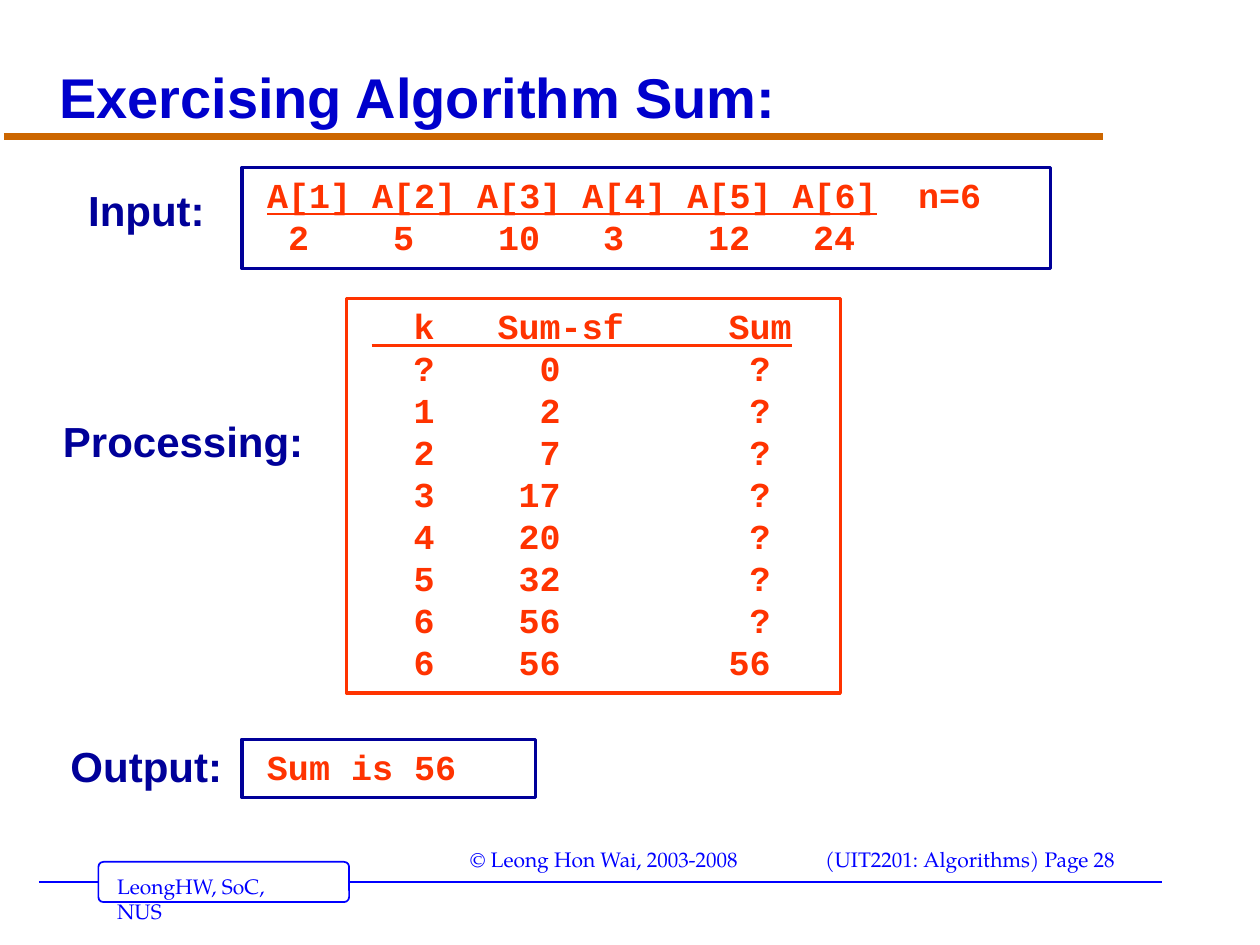
from pptx import Presentation
from pptx.dml.color import RGBColor
from pptx.enum.shapes import MSO_CONNECTOR, MSO_SHAPE
from pptx.enum.text import MSO_ANCHOR, MSO_AUTO_SIZE, PP_ALIGN
from pptx.oxml.ns import qn
from pptx.util import Pt
from lxml import etree

STRAIGHT = MSO_CONNECTOR.STRAIGHT
RECTANGLE, ROUNDED = MSO_SHAPE.RECTANGLE, MSO_SHAPE.ROUNDED_RECTANGLE
TOP, BOTTOM = MSO_ANCHOR.TOP, MSO_ANCHOR.BOTTOM
NO_AUTOFIT = MSO_AUTO_SIZE.NONE
LEFT = PP_ALIGN.LEFT

BLUE = RGBColor(0x00, 0x00, 0xFF)
TITLE_BLUE = RGBColor(0x00, 0x00, 0xCC)
NAVY = RGBColor(0x00, 0x00, 0x99)
ORANGE = RGBColor(0xCC, 0x66, 0x00)
RED = RGBColor(0xFF, 0x33, 0x00)
WHITE = RGBColor(0xFF, 0xFF, 0xFF)

CHAR = 12  # width of one Courier character at 20 pt


def add_run(paragraph, text, font, size, color, bold=True, underline=False):
    run = paragraph.add_run()
    run.text = text
    run.font.name = font
    run.font.size = Pt(size)
    run.font.color.rgb = color
    run.font.bold = bold
    run.font.underline = underline


def set_frame(frame, side, wrap=False):
    frame.auto_size = NO_AUTOFIT
    frame.word_wrap = wrap
    frame.vertical_anchor = TOP
    frame.margin_left = frame.margin_right = Pt(side)
    frame.margin_top = frame.margin_bottom = Pt(3.6)


prs = Presentation()
prs.slide_width, prs.slide_height = Pt(720), Pt(540)
slide = prs.slides.add_slide(prs.slide_layouts[5])
shapes = slide.shapes

# Footer rule, title rule and the rule under the trace header
for x1, x2, y, color, width in [(22.3, 663.8, 504, BLUE, 1),
                                (2.2, 630, 77.8, ORANGE, 4),
                                (212.4, 212.4 + 20 * CHAR, 197.3, RED, 1.5)]:
    rule = shapes.add_connector(STRAIGHT, Pt(x1), Pt(y), Pt(x2), Pt(y))
    rule.line.color.rgb = color
    rule.line.width = Pt(width)
    etree.SubElement(rule._element.spPr, qn("a:effectLst"))

# Footer badge and texts
badge = shapes.add_shape(ROUNDED, Pt(56.2), Pt(492.5), Pt(143.3), Pt(23))
badge.adjustments[0] = 0.125
badge.shadow.inherit = False
badge.fill.solid()
badge.fill.fore_color.rgb = WHITE
badge.line.color.rgb = BLUE
badge.line.width = Pt(1)

for text, x, y, width, wrap in [
        ("LeongHW, SoC, NUS", 59.8, 495.8, 118.8, True),
        ("(UIT2201: Algorithms) Page 28", 464.4, 480.2, 180.7, False),
        ("© Leong Hon Wai, 2003-2008", 261.4, 480.2, 168.5, False)]:
    footer = shapes.add_textbox(Pt(x), Pt(y), Pt(width), Pt(21.6)).text_frame
    set_frame(footer, 7.2, wrap)
    add_run(footer.paragraphs[0], text, "TeX Gyre Pagella", 12, BLUE, bold=False)

# Title
title = shapes.title
title.left, title.top, title.width, title.height = Pt(26.6), Pt(15.1), Pt(645.1), Pt(63.4)
set_frame(title.text_frame, 7.2, wrap=True)
title.text_frame.vertical_anchor = BOTTOM
heading = title.text_frame.paragraphs[0]
heading.alignment = LEFT
heading.line_spacing = 0.9
add_run(heading, "Exercising Algorithm Sum:", "Arial", 32, TITLE_BLUE)

# Rows are (underlined text, plain text, tab stops as (column, alignment))
input_rows = [
    ("A[1] A[2] A[3] A[4] A[5] A[6]", "\tn=6", [(31, "l")]),
    ("", "\t2\t5\t10\t3\t12\t24", [(1 + 5 * i, "l") for i in range(6)]),
]
trace = [("?", 0, "?"), (1, 2, "?"), (2, 7, "?"), (3, 17, "?"), (4, 20, "?"),
         (5, 32, "?"), (6, 56, "?"), (6, 56, 56)]
trace_rows = [("\tk\tSum-sf\tSum", "", [(2, "l"), (6, "l"), (17, "l")])]
for k, sum_so_far, total in trace:
    trace_rows.append(("", f"\t{k}\t{sum_so_far}\t{total}",
                       [(2, "l"), (9, "r"), (19, "r")]))
output_rows = [("", "Sum is 56", [])]

# Framed boxes
for x, y, width, height, color, rows in [
        (138.2, 95.8, 462.2, 57.6, NAVY, input_rows),
        (198, 170.6, 282.2, 225.4, RED, trace_rows),
        (138.2, 422.6, 167.8, 33.1, NAVY, output_rows)]:
    box = shapes.add_shape(RECTANGLE, Pt(x), Pt(y), Pt(width), Pt(height))
    box.shadow.inherit = False
    box.fill.background()
    box.line.color.rgb = color
    box.line.width = Pt(2)
    frame = box.text_frame
    set_frame(frame, 14.4, wrap=True)
    for i, (underlined, plain, stops) in enumerate(rows):
        row = frame.add_paragraph() if i else frame.paragraphs[0]
        row.alignment = LEFT
        if stops:
            tabs = etree.SubElement(row._p.get_or_add_pPr(), qn("a:tabLst"))
            for column, align in stops:
                etree.SubElement(tabs, qn("a:tab"), pos=str(Pt(column * CHAR)), algn=align)
        for text, is_underlined in [(underlined, True), (plain, False)]:
            if text:
                add_run(row, text, "Courier New", 20, RED, underline=is_underlined)

# Step labels
for text, x, y, width in [("Input:", 36, 102.2, 100.1),
                          ("Processing:", 21.6, 234, 170.6),
                          ("Output:", 25.9, 419.8, 119.5)]:
    label = shapes.add_textbox(Pt(x), Pt(y), Pt(width), Pt(36)).text_frame
    set_frame(label, 14.4)
    add_run(label.paragraphs[0], text, "Arial", 24, NAVY)

prs.save("out.pptx")
